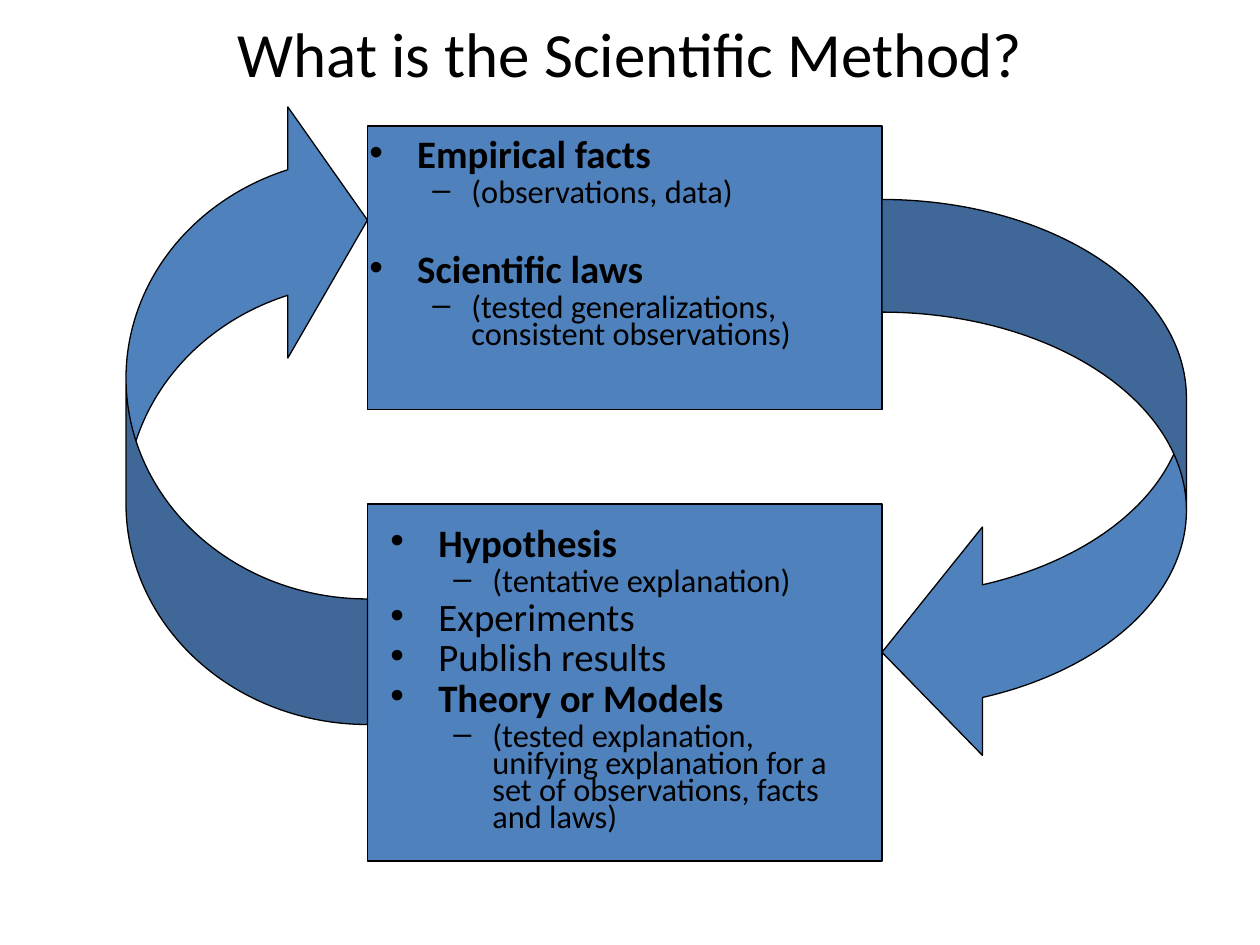
from lxml.etree import SubElement
from pptx import Presentation
from pptx.dml.color import RGBColor
from pptx.enum.shapes import MSO_SHAPE as Shape
from pptx.enum.text import MSO_ANCHOR as Anchor, PP_ALIGN as Align
from pptx.oxml.ns import qn
from pptx.util import Inches, Pt

BLANK_LAYOUT = 6
MAIN, DETAIL = 0, 1


def color(hex_code):
    return RGBColor.from_string(hex_code)


class MethodSlide:
    """Draws on a grid of 120 columns by 90 rows, twelve cells to the inch."""

    FONT, INK, BLUE = "Calibri", "000000", "4F81BD"
    # level: (bullet, size, left margin in inches, hanging indent in inches)
    LEVELS = {MAIN: ("•", 22.2, 0.38, 0.38), DETAIL: ("–", 18.5, 0.81, 0.31)}
    LINE_SPACING, SPACE_SHARE = 0.7, 0.2

    def __init__(self, deck):
        self.slide = deck.slides.add_slide(deck.slide_layouts[BLANK_LAYOUT])

    def place(self, cells):
        return [Inches(cell / 12) for cell in cells]

    def block(self, kind, cells, adjustments=(), rotation=0):
        block = self.slide.shapes.add_shape(kind, *self.place(cells))
        for index, value in enumerate(adjustments):
            block.adjustments[index] = value
        block.rotation = rotation
        block.shadow.inherit = False
        block.fill.solid()
        block.fill.fore_color.rgb = color(self.BLUE)
        block.line.color.rgb = color(self.INK)
        block.line.width = Pt(0.75)

    def text_frame(self, cells):
        frame = self.slide.shapes.add_textbox(*self.place(cells)).text_frame
        frame.word_wrap = True
        return frame

    def set_text(self, paragraph, text, size, bold=False):
        paragraph.text = text
        font = paragraph.font
        font.name, font.size, font.bold = self.FONT, Pt(size), bold
        font.color.rgb = color(self.INK)

    def title(self, text, cells):
        frame = self.text_frame(cells)
        frame.vertical_anchor = Anchor.MIDDLE
        heading = frame.paragraphs[0]
        heading.alignment = Align.CENTER
        self.set_text(heading, text, 36)

    def outline(self, items, cells):
        """Set (level, text, bold, extra points above) items as bullets."""
        frame = self.text_frame(cells)
        for index, (level, text, bold, gap) in enumerate(items):
            item = frame.add_paragraph() if index else frame.paragraphs[0]
            bullet, size, margin, hanging = self.LEVELS[level]
            item.level = level
            item.line_spacing = self.LINE_SPACING
            item.space_before = Pt(size * self.SPACE_SHARE + gap)
            properties = item._p.get_or_add_pPr()
            properties.set("marL", str(Inches(margin)))
            properties.set("indent", str(-Inches(hanging)))
            SubElement(properties, qn("a:buFont"), typeface="Arial")
            SubElement(properties, qn("a:buChar"), char=bullet)
            self.set_text(item, text, size, bold)


def main():
    deck = Presentation()
    deck.slide_width, deck.slide_height = Inches(10), Inches(7.5)
    page = MethodSlide(deck)

    page.block(Shape.RECTANGLE, (35, 48, 49, 34))
    page.block(Shape.RECTANGLE, (35, 12, 49, 27))
    page.title("What is the Scientific Method?", (9, 0, 102, 10))
    page.outline([
        (MAIN, "Empirical facts", True, 0),
        (DETAIL, "(observations, data)", False, 0),
        (MAIN, "Scientific laws", True, 23.4),
        (DETAIL, "(tested generalizations, consistent observations)", False, 0),
    ], (34, 13, 48, 26))
    page.outline([
        (MAIN, "Hypothesis", True, 0),
        (DETAIL, "(tentative explanation)", False, 0),
        (MAIN, "Experiments", False, 0),
        (MAIN, "Publish results", False, 0),
        (MAIN, "Theory or Models", True, 0),
        (DETAIL, "(tested explanation, unifying explanation for a set of "
                 "observations, facts and laws)", False, 0),
    ], (36, 50, 46, 32))
    page.block(Shape.CURVED_LEFT_ARROW, (84, 19, 29, 54), (0.37, 0.75, 0.33))
    page.block(Shape.CURVED_LEFT_ARROW, (12, 9, 23, 60), (0.52, 1.04, 0.33), 180)

    deck.save("out.pptx")


if __name__ == "__main__":
    main()
